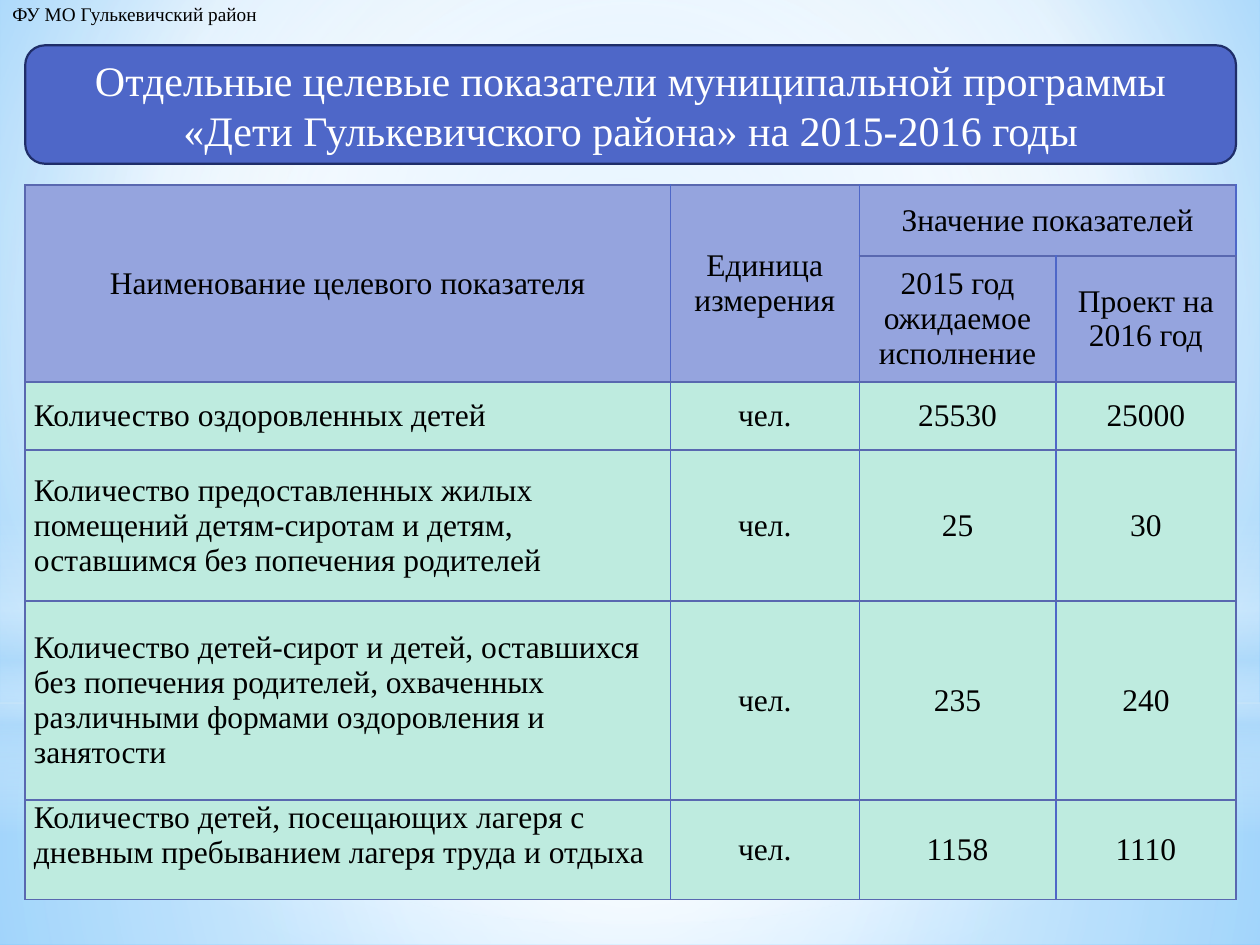
"""Build the slide with target indicators of the district children's programme."""
import lxml.etree
import pptx
import pptx.dml.color
import pptx.enum.shapes
import pptx.enum.text
import pptx.oxml.ns
import pptx.util

Inches = pptx.util.Inches
RGBColor = pptx.dml.color.RGBColor
Shapes = pptx.enum.shapes.MSO_SHAPE
Align = pptx.enum.text.PP_ALIGN
Anchor = pptx.enum.text.MSO_ANCHOR
qn = pptx.oxml.ns.qn

BLACK = RGBColor(0x00, 0x00, 0x00)
WHITE = RGBColor(0xFF, 0xFF, 0xFF)
SKY = RGBColor(0xB4, 0xDC, 0xFA)
LIGHT_BLUE = RGBColor(0x9E, 0xD5, 0xFF)
BRIGHT_BLUE = RGBColor(0x5B, 0xB9, 0xFF)
BLUE = RGBColor(0x4E, 0x67, 0xC8)
NAVY = RGBColor(0x1F, 0x2E, 0x69)
GRID = RGBColor(0x59, 0x68, 0xB0)
HEADER_FILL = RGBColor(0x95, 0xA4, 0xDE)
BODY_FILL = RGBColor(0xBE, 0xEB, 0xDF)

DEPARTMENT = "ФУ МО Гулькевичский район"
TITLE = "Отдельные целевые показатели муниципальной программы «Дети Гулькевичского района» на 2015-2016 годы"
HEADER = [
    ["Наименование целевого показателя", "Единица\nизмерения", "Значение показателей", ""],
    ["", "", "2015 год ожидаемое исполнение", "Проект на 2016 год"],
]
INDICATORS = [
    ["Количество оздоровленных детей", "чел.", "25530", "25000"],
    ["Количество предоставленных жилых помещений детям-сиротам и детям, оставшимся без попечения родителей",
     "чел.", "25", "30"],
    ["Количество детей-сирот и детей, оставшихся без попечения родителей, охваченных различными формами "
     "оздоровления и занятости", "чел.", "235", "240"],
    ["Количество детей, посещающих лагеря с дневным пребыванием лагеря труда и отдыха", "чел.", "1158", "1110"],
]
ROWS = HEADER + INDICATORS
COLUMN_WIDTHS = [5.12, 1.5, 1.56, 1.43]
ROW_HEIGHTS = [0.56, 1.0, 0.54, 1.2, 1.58, 0.79]
MERGES = [((0, 0), (1, 0)), ((0, 1), (1, 1)), ((0, 2), (0, 3))]
LEFT, WIDTH = 0.2, sum(COLUMN_WIDTHS)

CENTRE = (50, 50, 50, 50)
BACKDROP = [(0, LIGHT_BLUE, 100), (60, WHITE, 100), (100, BRIGHT_BLUE, 100)]
GLOWS = [
    (Shapes.RECTANGLE, (0, 5.58, 10, 1.92), [(0, WHITE, 91), (37, WHITE, 76), (100, SKY, 79)], CENTRE),
    (Shapes.RECTANGLE, (0, 0, 10, 5.58), [(0, WHITE, 89), (48, WHITE, 62), (100, SKY, 79)], CENTRE),
    (Shapes.RECTANGLE, (0, 4.12, 10, 2.5),
     [(0, WHITE, 0), (29, WHITE, 30), (45, SKY, 40), (55, WHITE, 26), (65, SKY, 60), (100, WHITE, 0)], None),
    (Shapes.OVAL, (0, 1.75, 10, 5.58), [(0, WHITE, 100), (56, WHITE, 0)], CENTRE),
]


def add_node(parent, tag, **attributes):
    return lxml.etree.SubElement(parent, qn(tag), {key: str(value) for key, value in attributes.items()})


def paint_gradient(fill, properties, stops, focus):
    fill.solid()
    solid = properties.find(".//" + qn("a:solidFill"))
    gradient = lxml.etree.Element(qn("a:gradFill"), rotWithShape="1")
    stop_list = add_node(gradient, "a:gsLst")
    for position, colour, opacity in stops:
        stop = add_node(stop_list, "a:gs", pos=position * 1000)
        add_node(add_node(stop, "a:srgbClr", val=colour), "a:alpha", val=opacity * 1000)
    if focus:
        circle = add_node(gradient, "a:path", path="circle")
        add_node(circle, "a:fillToRect", **{side: part * 1000 for side, part in zip("ltrb", focus)})
    else:
        add_node(gradient, "a:lin", ang=90 * 60000, scaled=0)
    solid.getparent().replace(solid, gradient)


def write(frame, text, size, colour, align=Align.LEFT):
    frame.text = text
    for paragraph in frame.paragraphs:
        paragraph.alignment = align
        for run in paragraph.runs:
            run.font.color.rgb = colour
            for name, value in {"name": "Times New Roman", "size": pptx.util.Pt(size), "bold": False}.items():
                setattr(run.font, name, value)


def add_shape(slide, kind, box):
    shape = slide.shapes.add_shape(kind, *map(Inches, box))
    shape.shadow.inherit = False
    return shape


def draw_borders(cell, column):
    last = len(COLUMN_WIDTHS) - 1
    colours = {"L": BLUE if column else GRID, "R": BLUE if column < last else GRID, "T": GRID, "B": GRID}
    properties = cell._tc.get_or_add_tcPr()
    for index, (side, colour) in enumerate(colours.items()):
        line = lxml.etree.Element(qn("a:ln" + side), w=str(pptx.util.Pt(1)))
        add_node(add_node(line, "a:solidFill"), "a:srgbClr", val=colour)
        properties.insert(index, line)


def add_indicator_table(slide):
    box = (LEFT, 1.47, WIDTH, sum(ROW_HEIGHTS))
    table = slide.shapes.add_table(len(ROWS), len(COLUMN_WIDTHS), *map(Inches, box)).table
    for column, width in zip(table.columns, COLUMN_WIDTHS):
        column.width = Inches(width)
    for row, height in zip(table.rows, ROW_HEIGHTS):
        row.height = Inches(height)
    for start, end in MERGES:
        table.cell(*start).merge(table.cell(*end))
    body_margins = {"margin_left": 0.07, "margin_top": 0, "margin_right": 0.07, "margin_bottom": 0}
    for r, texts in enumerate(ROWS):
        in_body = r >= len(HEADER)
        for c, text in enumerate(texts):
            cell = table.cell(r, c)
            cell.fill.solid()
            cell.fill.fore_color.rgb = BODY_FILL if in_body else HEADER_FILL
            draw_borders(cell, c)
            at_top = r == len(ROWS) - 1 and c == 0
            cell.vertical_anchor = Anchor.TOP if at_top else Anchor.MIDDLE
            if in_body:
                for name, margin in body_margins.items():
                    setattr(cell, name, Inches(margin))
            if text:
                write(cell.text_frame, text, 18, BLACK, Align.LEFT if in_body and c == 0 else Align.CENTER)


def main():
    deck = pptx.Presentation()
    deck.slide_width, deck.slide_height = Inches(10), Inches(7.5)
    slide = deck.slides.add_slide(deck.slide_layouts[6])
    paint_gradient(slide.background.fill, slide._element, BACKDROP, (20, 10, 20, 60))
    for kind, box, stops, focus in GLOWS:
        glow = add_shape(slide, kind, box)
        glow.line.fill.background()
        paint_gradient(glow.fill, glow._element.spPr, stops, focus)

    department = slide.shapes.add_textbox(*map(Inches, (0, -0.03, 2.18, 0.29)))
    department.text_frame.word_wrap = False
    write(department.text_frame, DEPARTMENT, 11, BLACK)

    add_indicator_table(slide)

    title = add_shape(slide, Shapes.ROUNDED_RECTANGLE, (LEFT, 0.36, WIDTH, 0.94))
    title.fill.solid()
    title.fill.fore_color.rgb = BLUE
    title.line.color.rgb = NAVY
    title.line.width = pptx.util.Pt(1.25)
    title.text_frame.vertical_anchor = Anchor.MIDDLE
    write(title.text_frame, TITLE, 24, WHITE, Align.CENTER)
    deck.save("out.pptx")


if __name__ == "__main__":
    main()
